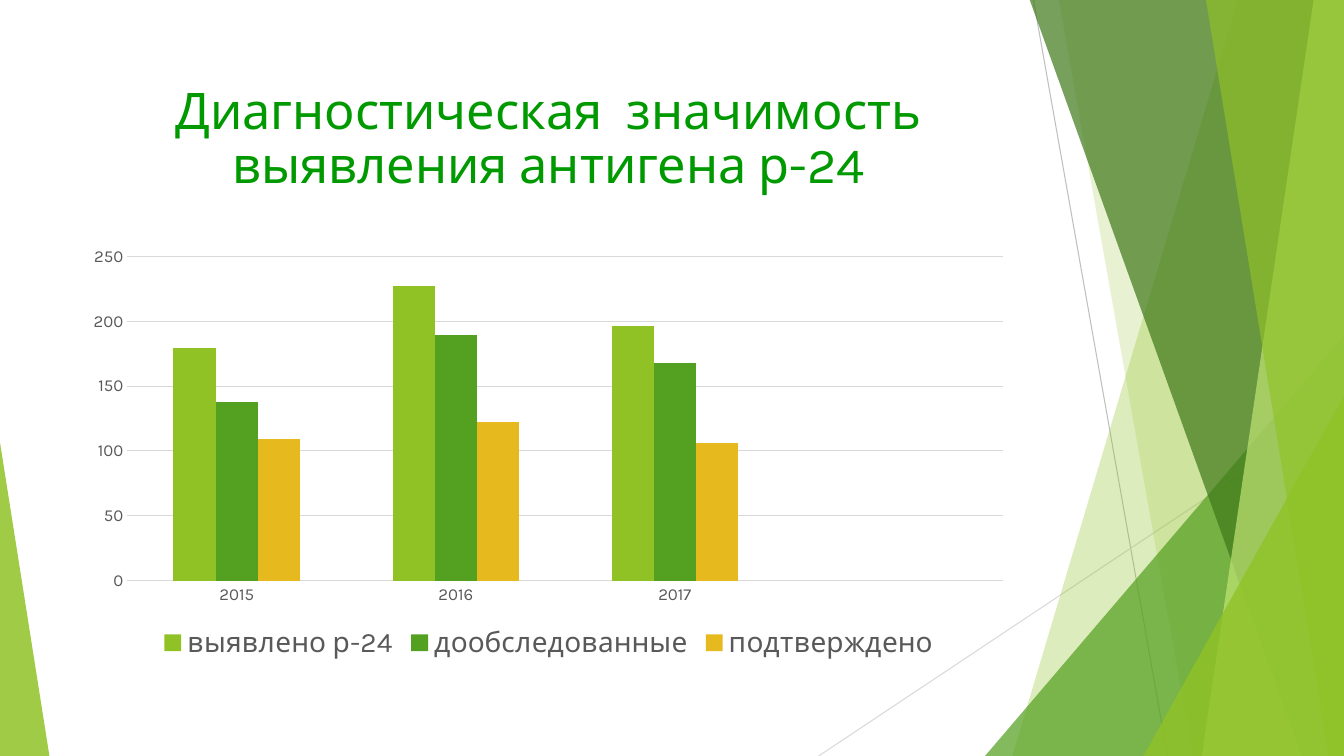
from dataclasses import dataclass

from lxml import etree
from pptx import Presentation
from pptx.chart.data import CategoryChartData
from pptx.dml.color import RGBColor
from pptx.enum.chart import XL_CHART_TYPE, XL_LEGEND_POSITION, XL_TICK_MARK
from pptx.enum.shapes import MSO_CONNECTOR, MSO_SHAPE
from pptx.enum.text import MSO_ANCHOR, PP_ALIGN
from pptx.oxml.ns import qn
from pptx.util import Pt

PX = 9144
WIDTH, HEIGHT = 1333, 750
TOP = -1
STRAIGHT = MSO_CONNECTOR.STRAIGHT
TRIANGLE = MSO_SHAPE.ISOSCELES_TRIANGLE
COLUMNS = XL_CHART_TYPE.COLUMN_CLUSTERED
LEGEND_BOTTOM = XL_LEGEND_POSITION.BOTTOM
NO_TICK = XL_TICK_MARK.NONE
MIDDLE = MSO_ANCHOR.MIDDLE
CENTER = PP_ALIGN.CENTER


@dataclass(frozen=True)
class Theme:
    """Colours, font and type sizes of the slide."""
    font: str = "Karla"
    title: str = "009900"
    label: str = "595959"
    chart_text: str = "000000"
    grid: str = "D9D9D9"
    line: str = "BFBFBF"
    lime: str = "90C226"
    green: str = "54A021"
    forest: str = "3F7819"
    pale: str = "C0E474"
    gold: str = "E6B91E"
    title_size: int = 36
    legend_size: int = 20
    axis_size: int = 12
    chart_size: int = 10
    line_width: float = 0.75


THEME = Theme()


@dataclass(frozen=True)
class Ray:
    """A thin decorative line."""
    start: tuple[int, int]
    end: tuple[int, int]
    color: str


@dataclass(frozen=True)
class Band:
    """A translucent band that reaches the right edge of the slide."""
    top_left: int
    bottom_left: int
    color: str
    opacity: int


@dataclass(frozen=True)
class Corner:
    """A translucent triangle standing on the bottom edge."""
    left: int
    top: int
    width: int
    apex: int
    color: str
    opacity: int


@dataclass(frozen=True)
class Series:
    """One column series of the chart."""
    name: str
    values: tuple[int | None, ...]
    color: str


DECORATION = (
    Ray((1025, 0), (1158, HEIGHT), THEME.line),
    Ray((WIDTH, 403), (812, HEIGHT), THEME.grid),
    Band(1228, 1004, THEME.lime, 30),
    Band(1050, 1183, THEME.lime, 20),
    Corner(977, 333, 356, 1, THEME.green, 72),
    Band(1021, 1291, THEME.forest, 70),
    Band(1303, 1192, THEME.pale, 70),
    Band(1196, 1318, THEME.lime, 65),
    Corner(1134, 393, 199, 1, THEME.lime, 80),
    Corner(0, 439, 49, 0, THEME.lime, 85),
)
YEARS = ("2015", "2016", "2017", "")
SERIES = (
    Series("выявлено р-24", (179, 227, 196, None), THEME.lime),
    Series("дообследованные", (138, 189, 168, None), THEME.green),
    Series("подтверждено", (109, 122, 106, None), THEME.gold),
)


def emu(*lengths: int) -> list[int]:
    """Turn px lengths into EMU."""
    return [length * PX for length in lengths]


def paint(shape, color: str, opacity: int) -> None:
    """Give a shape a translucent fill without line or shadow."""
    shape.shadow.inherit = False
    shape.line.fill.background()
    shape.fill.solid()
    shape.fill.fore_color.rgb = RGBColor.from_string(color)
    tint = shape.fill._xPr.find(".//" + qn("a:srgbClr"))
    etree.SubElement(tint, qn("a:alpha"), val=str(opacity * 1000))


def stroke(line, color: str) -> None:
    """Set the colour and the thin width of a line."""
    line.color.rgb = RGBColor.from_string(color)
    line.width = Pt(THEME.line_width)


def set_font(font, size: int, color: str) -> None:
    """Set typeface, size and colour."""
    font.name = THEME.font
    font.size = Pt(size)
    font.color.rgb = RGBColor.from_string(color)


def draw_ray(page, ray: Ray) -> None:
    """Draw a thin line."""
    connector = page.shapes.add_connector(STRAIGHT, *emu(*ray.start, *ray.end))
    stroke(connector.line, ray.color)
    etree.SubElement(connector._element.spPr, qn("a:effectLst"))


def draw_band(page, band: Band) -> None:
    """Draw a band as a four-sided outline."""
    outline = page.shapes.build_freeform(band.top_left, TOP, scale=PX)
    outline.add_line_segments(
        [(WIDTH, TOP), (WIDTH, HEIGHT), (band.bottom_left, HEIGHT)], close=True)
    paint(outline.convert_to_shape(), band.color, band.opacity)


def draw_corner(page, corner: Corner) -> None:
    """Draw a right-angled triangle."""
    frame = emu(corner.left, corner.top, corner.width, HEIGHT - corner.top)
    shape = page.shapes.add_shape(TRIANGLE, *frame)
    shape.adjustments[0] = corner.apex
    paint(shape, corner.color, corner.opacity)


def add_text(page, text: str, *, frame: tuple[int, int, int, int], size: int,
             color: str, align=CENTER, anchor=MIDDLE, spacing: float = 0.9) -> None:
    """Add a wrapped text box with one paragraph."""
    box = page.shapes.add_textbox(*emu(*frame)).text_frame
    box.word_wrap = True
    box.vertical_anchor = anchor
    para = box.paragraphs[0]
    para.alignment = align
    para.line_spacing = spacing
    span = para.add_run()
    span.text = text
    set_font(span.font, size, color)


def add_columns(page, frame: tuple[int, int, int, int]) -> None:
    """Add the clustered column chart."""
    data = CategoryChartData()
    data.categories = YEARS
    for series in SERIES:
        data.add_series(series.name, series.values)
    chart = page.shapes.add_chart(COLUMNS, *emu(*frame), data).chart
    set_font(chart.font, THEME.chart_size, THEME.chart_text)
    chart.has_title = False
    chart.has_legend = True
    chart.legend.position = LEGEND_BOTTOM
    chart.legend.include_in_layout = False
    set_font(chart.legend.font, THEME.legend_size, THEME.label)
    for axis in (chart.category_axis, chart.value_axis):
        axis.major_tick_mark = axis.minor_tick_mark = NO_TICK
        set_font(axis.tick_labels.font, THEME.axis_size, THEME.label)
    stroke(chart.category_axis.format.line, THEME.grid)
    values = chart.value_axis
    values.minimum_scale, values.maximum_scale, values.major_unit = 0, 250, 50
    values.format.line.fill.background()
    stroke(values.major_gridlines.format.line, THEME.grid)
    plot = chart.plots[0]
    plot.gap_width, plot.overlap, plot.vary_by_categories = 219, 0, False
    for column, series in zip(plot.series, SERIES):
        column.format.fill.solid()
        column.format.fill.fore_color.rgb = RGBColor.from_string(series.color)


def main() -> None:
    """Build and save the slide."""
    deck = Presentation()
    deck.slide_width, deck.slide_height = emu(WIDTH, HEIGHT)
    page = deck.slides.add_slide(deck.slide_layouts[6])
    painters = {Ray: draw_ray, Band: draw_band, Corner: draw_corner}
    for item in DECORATION:
        painters[type(item)](page, item)
    add_text(page, "Диагностическая  значимость выявления антигена р-24",
             frame=(74, 67, 940, 144), size=THEME.title_size, color=THEME.title)
    add_columns(page, (74, 236, 940, 424))
    deck.save("out.pptx")


if __name__ == "__main__":
    main()
